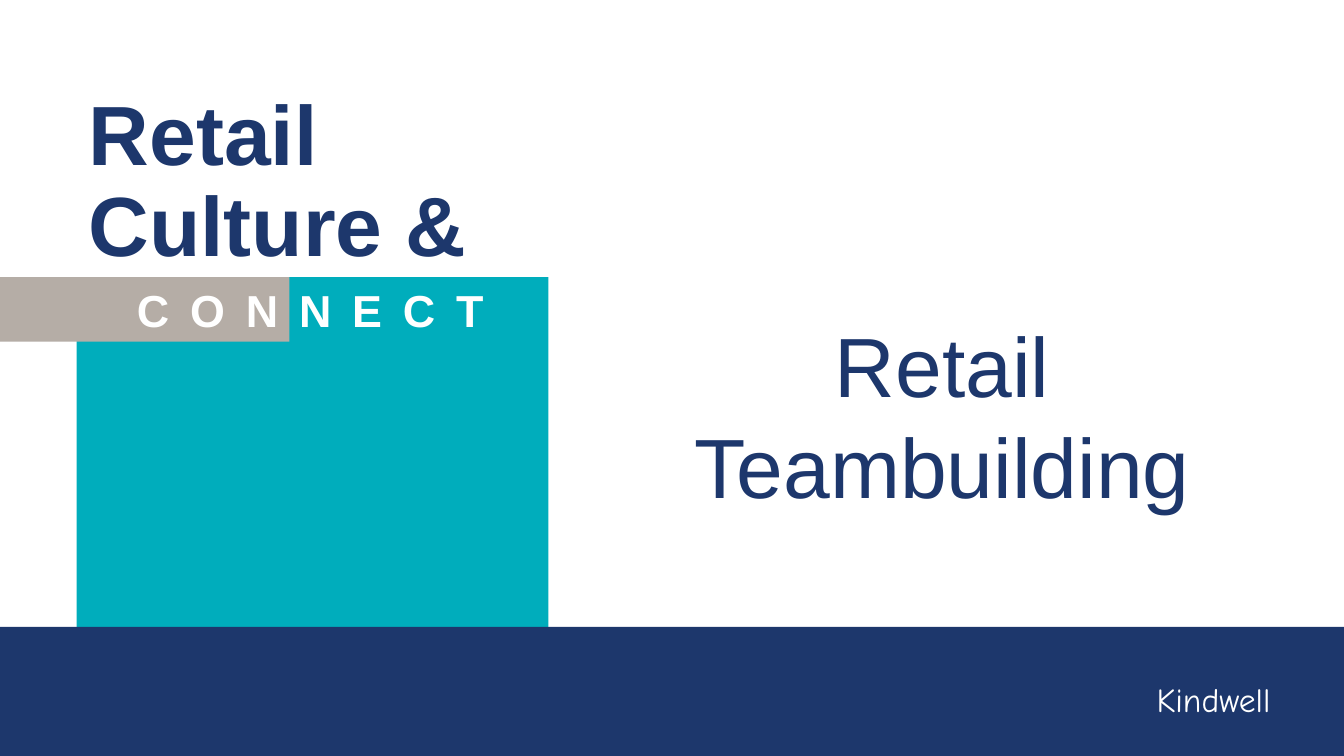
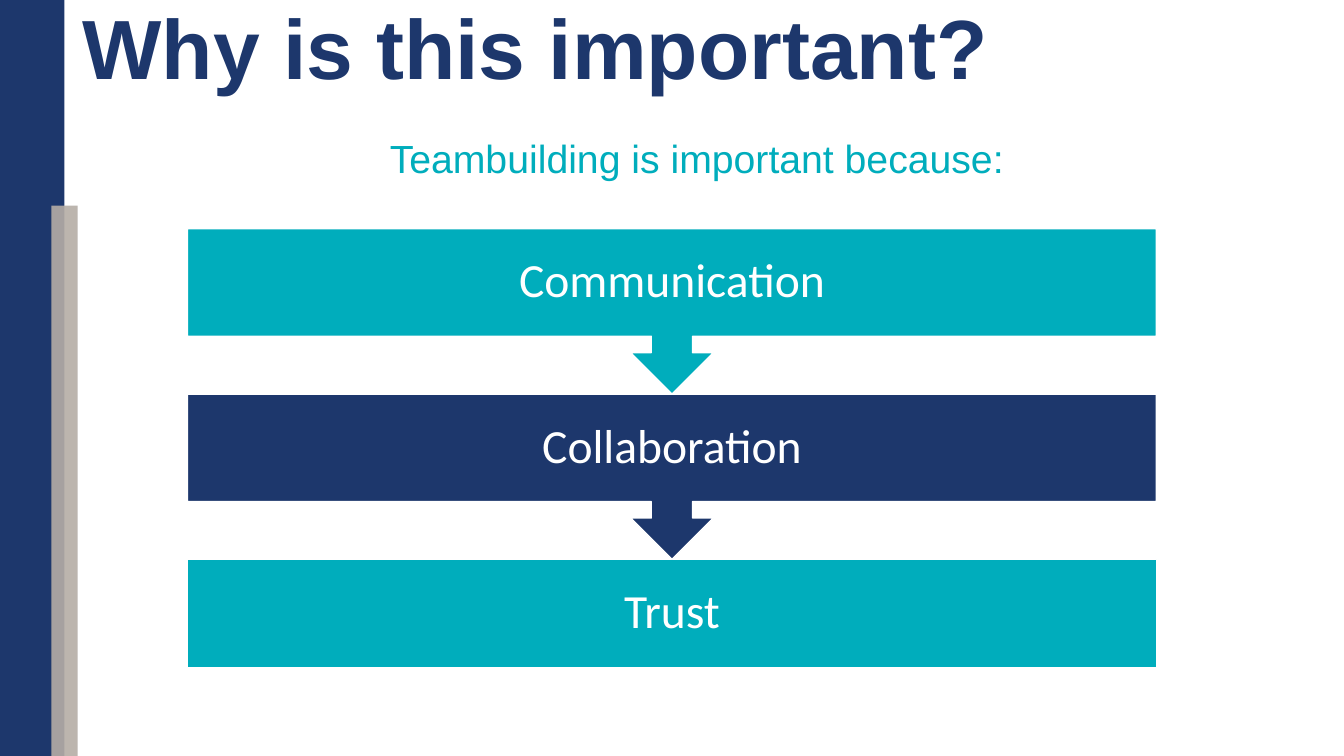
from dataclasses import dataclass

from lxml.etree import SubElement
from pptx import Presentation
from pptx.dml.color import RGBColor
from pptx.enum.shapes import MSO_SHAPE
from pptx.enum.text import MSO_ANCHOR, MSO_AUTO_SIZE, PP_ALIGN
from pptx.oxml.ns import qn
from pptx.util import Inches, Pt

NAVY = RGBColor(0x1D, 0x37, 0x6C)
TEAL = RGBColor(0x00, 0xAD, 0xBC)
TAUPE = RGBColor(0xB5, 0xAD, 0xA6)
WHITE = RGBColor(0xFF, 0xFF, 0xFF)

HEADING_FONT = "Arial"
STEP_FONT = "Calibri"
SIGNATURE_FONT = "Comic Neue"


@dataclass
class Box:
    left: float
    top: float
    width: float
    height: float

    def inside(self, left, top, width, height):
        return Box(self.left + left, self.top + top, width, height)

    def lengths(self):
        return [Inches(v) for v in (self.left, self.top, self.width, self.height)]


PAGE = Box(0, 0, 13.33, 7.5)


def place(part, box):
    part.left, part.top, part.width, part.height = box.lengths()


def add_block(slide, box, color, preset=MSO_SHAPE.RECTANGLE):
    block = slide.shapes.add_shape(preset, *box.lengths())
    block.shadow.inherit = False
    block.fill.solid()
    block.fill.fore_color.rgb = color
    block.line.fill.background()
    return block


def set_opacity(block, percent):
    color = block.element.spPr.find(qn("a:solidFill")).find(qn("a:srgbClr"))
    SubElement(color, qn("a:alpha")).set("val", str(percent * 1000))


def write(frame, lines, size, color, font=HEADING_FONT, bold=False,
          align=PP_ALIGN.LEFT, anchor=MSO_ANCHOR.TOP, leading=None, tracking=0):
    frame.word_wrap = True
    frame.auto_size = MSO_AUTO_SIZE.NONE
    frame.vertical_anchor = anchor
    for index, line in enumerate(lines):
        paragraph = frame.add_paragraph() if index else frame.paragraphs[0]
        paragraph.alignment = align
        paragraph.space_before = Pt(0)
        if leading:
            paragraph.line_spacing = leading
        run = paragraph.add_run()
        run.text = line
        run.font.name = font
        run.font.size = Pt(size)
        run.font.bold = bold
        run.font.color.rgb = color
        if tracking:
            run.font._element.set("spc", str(tracking * 100))


def add_label(slide, box, text, size, color, **style):
    label = slide.shapes.add_textbox(*box.lengths())
    write(label.text_frame, [text], size, color, **style)


def set_title(slide, box, lines):
    title = slide.shapes.title
    place(title, box)
    write(title.text_frame, lines, 60, NAVY, bold=True, leading=Pt(65))


def add_program_panel(slide, box):
    add_block(slide, box.inside(0.76, 0, 4.68, box.height), TEAL)
    add_block(slide, box.inside(0, 0, 2.87, 0.64), TAUPE)
    add_label(slide, box.inside(1.26, 0.01, 11.97, 0.64), "C O N N E C T", 32, WHITE,
              bold=True, tracking=3)


def add_footer(slide, box):
    add_block(slide, box, NAVY)
    add_label(slide, box.inside(10.94, 0.47, 2.19, 0.5), "Kindwell", 24, WHITE,
              font=SIGNATURE_FONT, align=PP_ALIGN.CENTER)


def add_side_band(slide, box):
    add_block(slide, box, NAVY)
    accent = add_block(slide, box.inside(0.51, 2.04, 0.26, box.height - 2.04), TAUPE)
    set_opacity(accent, 90)


def add_reasons(slide, box, reasons):
    step_height = 1.07
    pitch = (box.height - step_height) / (len(reasons) - 1)
    last = len(reasons) - 1
    for index in range(last, -1, -1):
        color = NAVY if index % 2 else TEAL
        is_last = index == last
        height = step_height if is_last else pitch
        preset = MSO_SHAPE.RECTANGLE if is_last else MSO_SHAPE.DOWN_ARROW_CALLOUT
        step = add_block(slide, box.inside(0, index * pitch, box.width, height),
                         color, preset)
        if not is_last:
            for position, value in enumerate((0.25, 0.25, 0.25, 0.65)):
                step.adjustments[position] = value
        step.line.color.rgb = WHITE
        step.line.width = Pt(1)
        write(step.text_frame, [reasons[index]], 34, WHITE, font=STEP_FONT,
              align=PP_ALIGN.CENTER, anchor=MSO_ANCHOR.MIDDLE, leading=0.9)


def build_cover(deck):
    slide = deck.slides.add_slide(deck.slide_layouts[0])
    set_title(slide, PAGE.inside(0.78, 0.86, 12.07, 1.92), ["Retail", "Culture &"])
    topic = slide.placeholders[1]
    place(topic, PAGE.inside(6.19, 3.06, 6.31, 2.12))
    write(topic.text_frame, ["Retail Teambuilding"], 60, NAVY,
          align=PP_ALIGN.CENTER, leading=Pt(72))
    add_program_panel(slide, PAGE.inside(0, 2.75, PAGE.width, 3.47))
    add_footer(slide, PAGE.inside(0, 6.22, PAGE.width, 1.28))


def build_importance(deck):
    slide = deck.slides.add_slide(deck.slide_layouts[5])
    set_title(slide, PAGE.inside(0.72, 0, 11.81, 1.01), ["Why is this important?"])
    add_side_band(slide, PAGE.inside(0, 0, 0.64, PAGE.height))
    add_label(slide, PAGE.inside(3.36, 1.28, 7.1, 0.57),
              "Teambuilding is important because:", 28, TEAL, align=PP_ALIGN.CENTER)
    add_reasons(slide, PAGE.inside(1.86, 2.27, 9.61, 4.35),
                ["Communication", "Collaboration", "Trust"])


def main():
    deck = Presentation()
    deck.slide_width = Inches(PAGE.width)
    deck.slide_height = Inches(PAGE.height)
    build_cover(deck)
    build_importance(deck)
    deck.save("out.pptx")


if __name__ == "__main__":
    main()
